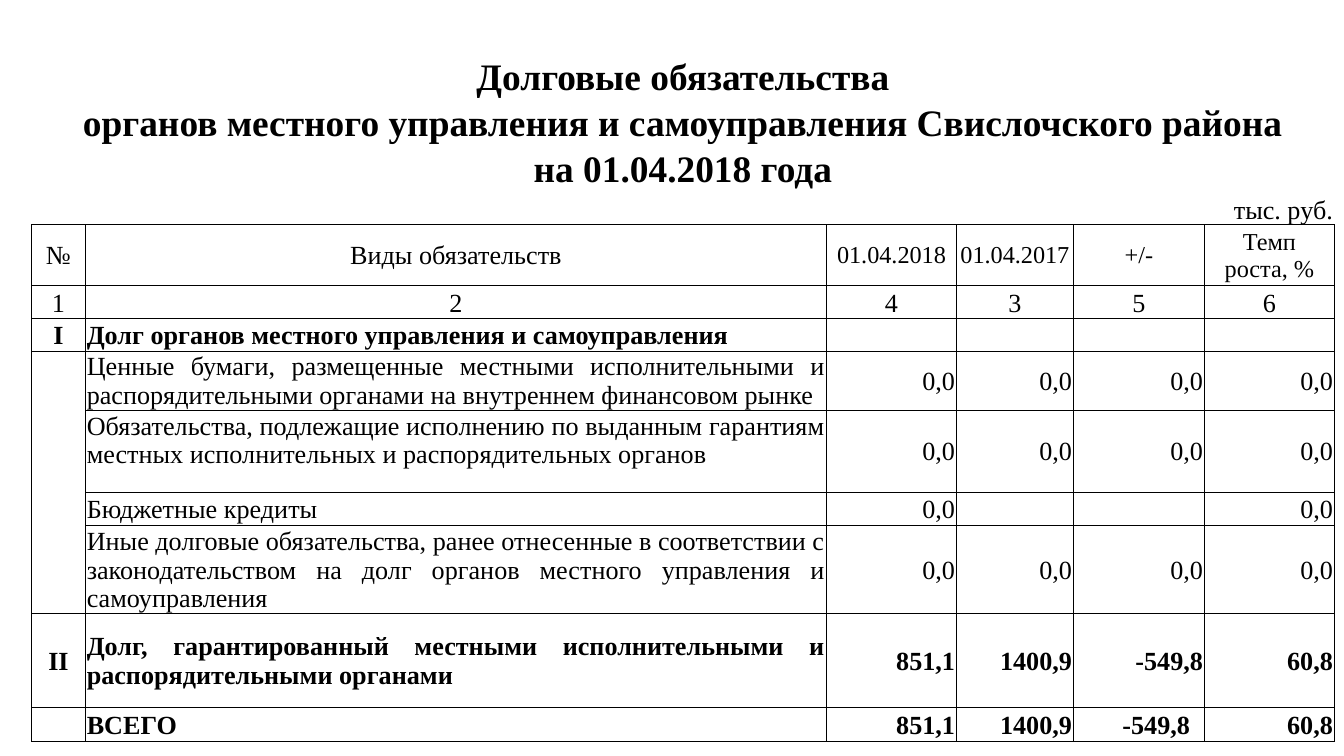
from lxml import etree
from pptx import Presentation
from pptx.dml.color import RGBColor
from pptx.enum.text import MSO_ANCHOR, PP_ALIGN
from pptx.oxml.ns import qn
from pptx.util import Pt

BLACK = RGBColor(0, 0, 0)
WHITE = RGBColor(255, 255, 255)
FONT = "Times New Roman"
LEFT, CENTER, RIGHT, JUSTIFY = PP_ALIGN.LEFT, PP_ALIGN.CENTER, PP_ALIGN.RIGHT, PP_ALIGN.JUSTIFY
TOP, MIDDLE, BOTTOM = MSO_ANCHOR.TOP, MSO_ANCHOR.MIDDLE, MSO_ANCHOR.BOTTOM
INSET = 0.72
BORDER_WIDTH = 0.5

COLUMN_WIDTHS = [28.9, 397, 69.6, 62.7, 70.2, 69.6]
ROW_HEIGHTS = [24.7, 24.7, 24.7, 18.2, 32.5, 17.6, 16.2, 31.6, 43.9, 17.7, 47.1, 50.4, 18.2]

CAPTIONS = [
    "Долговые обязательства",
    "органов местного управления и самоуправления Свислочского района",
    "на 01.04.2018 года",
]
UNIT = "тыс. руб."
HEADERS = ["№", "Виды обязательств", "01.04.2018", "01.04.2017", "+/-", "Темп\nроста, %"]
NUMBERS = ["1", "2", "4", "3", "5", "6"]
DEBTS = [
    ["I", "Долг органов местного управления и самоуправления", "", "", "", ""],
    ["", "Ценные бумаги, размещенные местными исполнительными и распорядительными "
         "органами на внутреннем финансовом рынке", "0,0", "0,0", "0,0", "0,0"],
    ["", "Обязательства, подлежащие исполнению по выданным гарантиям местных "
         "исполнительных и распорядительных органов", "0,0", "0,0", "0,0", "0,0"],
    ["", "Бюджетные кредиты", "0,0", "", "", "0,0"],
    ["", "Иные долговые обязательства, ранее отнесенные в соответствии с законодательством "
         "на долг органов местного управления и самоуправления", "0,0", "0,0", "0,0", "0,0"],
    ["II", "Долг, гарантированный местными исполнительными и распорядительными органами",
     "851,1", "1400,9", "-549,8", "60,8"],
    ["", "ВСЕГО", "851,1", "1400,9", "-549,8", "60,8"],
]
HEADER_ROW = len(CAPTIONS) + 1
NUMBER_ROW = HEADER_ROW + 1
FIRST_DEBT = NUMBER_ROW + 1
GUARANTEE_ROW = FIRST_DEBT + 2
FIRST_DETAIL, LAST_DETAIL = FIRST_DEBT + 1, FIRST_DEBT + 4
TOTAL_ROW = len(ROW_HEIGHTS) - 1


def set_borders(cell, visible_sides):
    """Draw the named sides of a cell (L, R, T, B) and clear the others."""
    properties = cell._tc.get_or_add_tcPr()
    for side in "LRTB":
        line = etree.SubElement(properties, qn(f"a:ln{side}"), w=str(int(Pt(BORDER_WIDTH))))
        if side in visible_sides:
            fill = etree.SubElement(line, qn("a:solidFill"))
            etree.SubElement(fill, qn("a:srgbClr"), val=str(BLACK))
        else:
            etree.SubElement(line, qn("a:noFill"))


def format_cell(cell, text, alignment, anchor=MIDDLE, size=14, bold=False, borders="LRTB"):
    """Write and format one table cell."""
    cell.margin_left = cell.margin_right = cell.margin_top = Pt(INSET)
    cell.margin_bottom = 0
    cell.vertical_anchor = anchor
    set_borders(cell, borders)
    cell.fill.solid()
    cell.fill.fore_color.rgb = WHITE
    cell.text_frame.text = text
    for paragraph in cell.text_frame.paragraphs:
        paragraph.alignment = alignment
        for run in paragraph.runs:
            run.font.name = FONT
            run.font.size = Pt(size)
            run.font.bold = bold
            run.font.color.rgb = BLACK
        if not text:
            etree.SubElement(paragraph._p, qn("a:endParaRPr"), sz=str(size * 100))


def fill_captions(table):
    """Fill the merged heading rows and the unit row above the grid."""
    last_column = len(COLUMN_WIDTHS) - 1
    for row, text in enumerate(CAPTIONS + [UNIT]):
        is_unit = text == UNIT
        for column in range(last_column + 1):
            format_cell(table.cell(row, column), "" if column else text,
                        RIGHT if is_unit else CENTER, BOTTOM,
                        14 if is_unit else 20, not is_unit, "B" if is_unit else "")
        table.cell(row, 0).merge(table.cell(row, last_column))


def fill_headers(table):
    """Fill the column headers and the column numbers."""
    for column, (header, number) in enumerate(zip(HEADERS, NUMBERS)):
        format_cell(table.cell(HEADER_ROW, column), header, CENTER, size=14 if column < 2 else 13)
        format_cell(table.cell(NUMBER_ROW, column), number, CENTER, BOTTOM)


def fill_debts(table):
    """Fill the debt rows, leaving the number column open beside the details."""
    for row, values in enumerate(DEBTS, FIRST_DEBT):
        is_detail = FIRST_DETAIL <= row <= LAST_DETAIL
        for column, text in enumerate(values):
            alignment = [CENTER, LEFT if row == TOTAL_ROW else JUSTIFY][column] if column < 2 else RIGHT
            anchor = TOP if (row, column) == (GUARANTEE_ROW, 1) else MIDDLE
            borders = "LRTB"
            if is_detail and column == 0:
                borders = "LR" + "T" * (row == FIRST_DETAIL) + "B" * (row == LAST_DETAIL)
            format_cell(table.cell(row, column), text, alignment, anchor,
                        bold=not is_detail, borders=borders)
    table.cell(TOTAL_ROW, 4).margin_right = Pt(7.7)


def add_debt_table(slide, left, top):
    """Place the debt table with its top left corner at the given point."""
    frame = slide.shapes.add_table(len(ROW_HEIGHTS), len(COLUMN_WIDTHS), Pt(left), Pt(top),
                                   Pt(sum(COLUMN_WIDTHS)), Pt(sum(ROW_HEIGHTS)))
    table = frame.table
    table.first_row = table.horz_banding = False
    for column, width in zip(table.columns, COLUMN_WIDTHS):
        column.width = Pt(width)
    for row, height in zip(table.rows, ROW_HEIGHTS):
        row.height = Pt(height)
    fill_captions(table)
    fill_headers(table)
    fill_debts(table)


def main():
    """Build and save the presentation."""
    presentation = Presentation()
    presentation.slide_width, presentation.slide_height = Pt(720), Pt(405)
    slide = presentation.slides.add_slide(presentation.slide_layouts[6])
    add_debt_table(slide, 16.9, 28.1)
    presentation.save("out.pptx")


if __name__ == "__main__":
    main()
